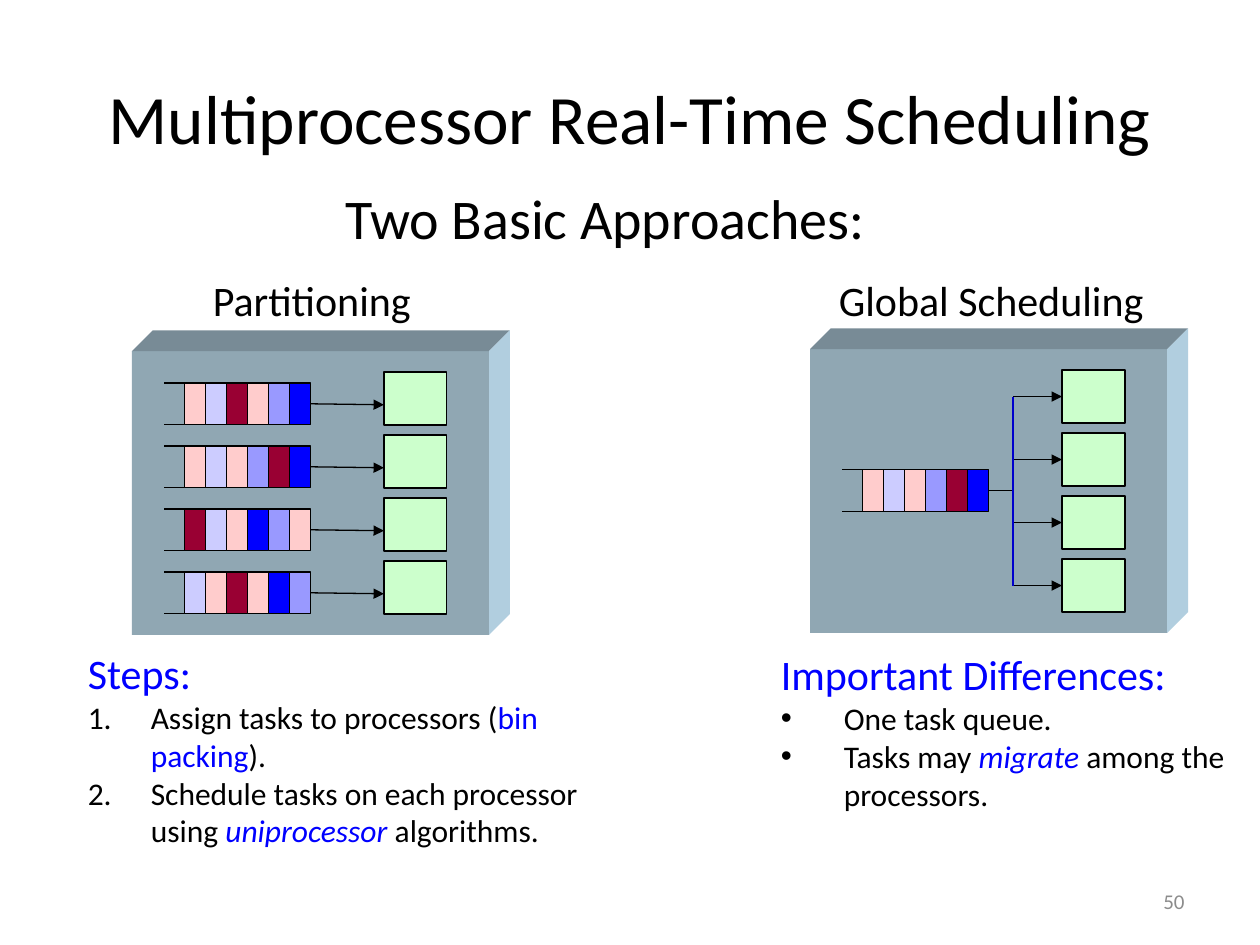
from lxml.etree import SubElement
from pptx import Presentation
from pptx.dml.color import RGBColor
from pptx.enum.shapes import MSO_CONNECTOR as Link, MSO_SHAPE as Shape
from pptx.enum.text import MSO_ANCHOR as Anchor, PP_ALIGN as Align
from pptx.oxml.ns import qn
from pptx.util import Cm, Pt

FONT = "Calibri"
BLACK, BLUE = "000000", "0000FF"
PINK, LILAC, RED, VIOLET = "FFCCCC", "CCCCFF", "990033", "9999FF"
DEPTH, PITCH = 0.42, 1.27
CELL_WIDTH, CELL_HEIGHT = 0.423, 0.84
PROCESSOR_HEIGHT = 1.07
PARTITIONED_QUEUES = [
    [PINK, LILAC, RED, PINK, VIOLET, BLUE],
    [PINK, LILAC, PINK, VIOLET, RED, BLUE],
    [RED, LILAC, PINK, BLUE, VIOLET, PINK],
    [LILAC, PINK, RED, PINK, BLUE, VIOLET],
]
GLOBAL_QUEUE = [PINK, LILAC, PINK, VIOLET, RED, BLUE]


def color(value):
    """Turn a hex string into a colour."""
    return RGBColor.from_string(value)


def paint(shape, fill, line=None):
    """Give a shape a flat fill and an optional thin outline."""
    shape.shadow.inherit = False
    shape.fill.solid()
    shape.fill.fore_color.rgb = color(fill)
    if line:
        shape.line.color.rgb = color(line)
        shape.line.width = Pt(0.75)
    else:
        shape.line.fill.background()
    return shape


def add_box(page, left, top, width, height, fill, line=None):
    """Add a rectangle."""
    box = page.shapes.add_shape(Shape.RECTANGLE, Cm(left), Cm(top), Cm(width), Cm(height))
    return paint(box, fill, line)


def add_face(page, points, fill):
    """Add a closed polygon."""
    corners = [(Cm(x), Cm(y)) for x, y in points]
    builder = page.shapes.build_freeform(*corners[0])
    builder.add_line_segments(corners[1:], close=True)
    return paint(builder.convert_to_shape(), fill)


def add_line(page, start, end, arrow=False, line=BLACK, width=0.75):
    """Add a straight line, with an arrowhead at its end if asked."""
    connector = page.shapes.add_connector(
        Link.STRAIGHT, Cm(start[0]), Cm(start[1]), Cm(end[0]), Cm(end[1]))
    connector.line.color.rgb = color(line)
    connector.line.width = Pt(width)
    if arrow:
        SubElement(connector.line._get_or_add_ln(), qn("a:tailEnd"), type="triangle")
    SubElement(connector._element.spPr, qn("a:effectLst"))
    return connector


def style(span, size, fill, italic=False):
    """Format a run."""
    span.font.name = FONT
    span.font.size = Pt(size)
    span.font.color.rgb = color(fill)
    span.font.italic = italic


def add_text(page, text, place, size, fill=BLACK, align=Align.LEFT, anchor=Anchor.TOP):
    """Add a text box with one paragraph."""
    box = page.shapes.add_textbox(*[Cm(length) for length in place])
    frame = box.text_frame
    frame.word_wrap = True
    frame.vertical_anchor = anchor
    frame.text = text
    para = frame.paragraphs[0]
    para.alignment = align
    style(para.runs[0], size, fill)
    return frame


def add_list(page, heading, place, items, numbered=False):
    """Add a blue heading with a bulleted or numbered list below it."""
    frame = add_text(page, heading, place, 24, BLUE)
    for item in items:
        para = frame.add_paragraph()
        properties = para._p.get_or_add_pPr()
        properties.set("marL", str(Cm(1.27)))
        properties.set("indent", str(-Cm(1.27)))
        if numbered:
            SubElement(properties, qn("a:buAutoNum"), type="arabicPeriod")
        else:
            SubElement(properties, qn("a:buFont"), typeface="Arial")
            SubElement(properties, qn("a:buChar"), char="•")
        for text, fill, italic in item:
            span = para.add_run()
            span.text = text
            style(span, 18, fill, italic)


def add_panel(page, left, top):
    """Add the raised panel with its four processors, and return these."""
    width, height = 7.2, 5.72
    right, bottom = left + width, top + height
    add_box(page, left, top, width, height, "90A7B3")
    add_face(page, [(left, top), (left + DEPTH, top - DEPTH),
                    (right + DEPTH, top - DEPTH), (right, top)], "788B96")
    add_face(page, [(right, top), (right + DEPTH, top - DEPTH),
                    (right + DEPTH, bottom - DEPTH), (right, bottom)], "B1CEDF")
    return [add_box(page, left + 5.08, top + 0.42 + row * PITCH, 1.27, PROCESSOR_HEIGHT,
                    "CCFFCC", BLACK) for row in range(4)]


def add_queue(page, left, top, fills):
    """Add a task queue with its open tail, and return the head cell."""
    for y in (top, top + CELL_HEIGHT):
        add_line(page, (left, y), (left - 0.42, y))
    cells = [add_box(page, left + index * CELL_WIDTH, top, CELL_WIDTH, CELL_HEIGHT, fill, BLACK)
             for index, fill in enumerate(fills)]
    return cells[-1]


def add_partitioning(page, left, top):
    """Draw one queue for each processor."""
    add_panel(page, left, top)
    for row, fills in enumerate(PARTITIONED_QUEUES):
        queue_top = top + 0.64 + row * PITCH
        head = add_queue(page, left + 1.06, queue_top, fills)
        y = queue_top + CELL_HEIGHT / 2
        arrow = add_line(page, (left + 3.6, y), (left + 5.08, y + 0.02), arrow=True)
        arrow.begin_connect(head, 3)


def add_global_scheduling(page, left, top):
    """Draw one queue that feeds all processors over a bus."""
    processors = add_panel(page, left, top)
    bus = left + 4.09
    first = top + 0.42 + PROCESSOR_HEIGHT / 2
    queue_top = top + 2.43
    head = add_queue(page, left + 1.06, queue_top, GLOBAL_QUEUE)
    y = queue_top + CELL_HEIGHT / 2
    add_line(page, (left + 3.6, y), (bus, y)).begin_connect(head, 3)
    for row, processor in enumerate(processors):
        y = first + row * PITCH
        add_line(page, (bus, y), (left + 5.08, y), arrow=True).end_connect(processor, 1)
    add_line(page, (bus, first), (bus, first + 3 * PITCH), line="0000CC", width=1)


def main():
    """Build the slide and save it."""
    deck = Presentation()
    deck.slide_width, deck.slide_height = Cm(25.4), Cm(19.05)
    page = deck.slides.add_slide(deck.slide_layouts[6])
    add_text(page, "Multiprocessor Real-Time Scheduling", (1.27, 0.76, 22.86, 3.18), 39.6,
             align=Align.CENTER, anchor=Anchor.MIDDLE)
    add_text(page, "Two Basic Approaches:", (6.71, 3.58, 12.34, 1.63), 32)
    add_text(page, "Partitioning", (4.04, 5.41, 4.75, 1.27), 24)
    add_text(page, "Global Scheduling", (16.66, 5.41, 7.39, 1.27), 24)
    add_partitioning(page, 2.66, 7.08)
    add_global_scheduling(page, 16.33, 7.04)
    add_list(page, "Steps:", (1.52, 12.93, 10.8, 5.08), [
        [("Assign tasks to processors (", BLACK, False), ("bin packing", BLUE, False),
         (").", BLACK, False)],
        [("Schedule tasks on each processor using ", BLACK, False),
         ("uniprocessor", BLUE, True), (" algorithms.", BLACK, False)],
    ], numbered=True)
    add_list(page, "Important Differences:", (15.49, 12.95, 9.6, 3.56), [
        [("One task queue.", BLACK, False)],
        [("Tasks may ", BLACK, False), ("migrate", BLUE, True),
         (" among the processors.", BLACK, False)],
    ])
    add_text(page, "50", (18.21, 17.65, 5.92, 1.02), 12, "8C8C8C", Align.RIGHT, Anchor.MIDDLE)
    deck.save("out.pptx")


if __name__ == "__main__":
    main()
